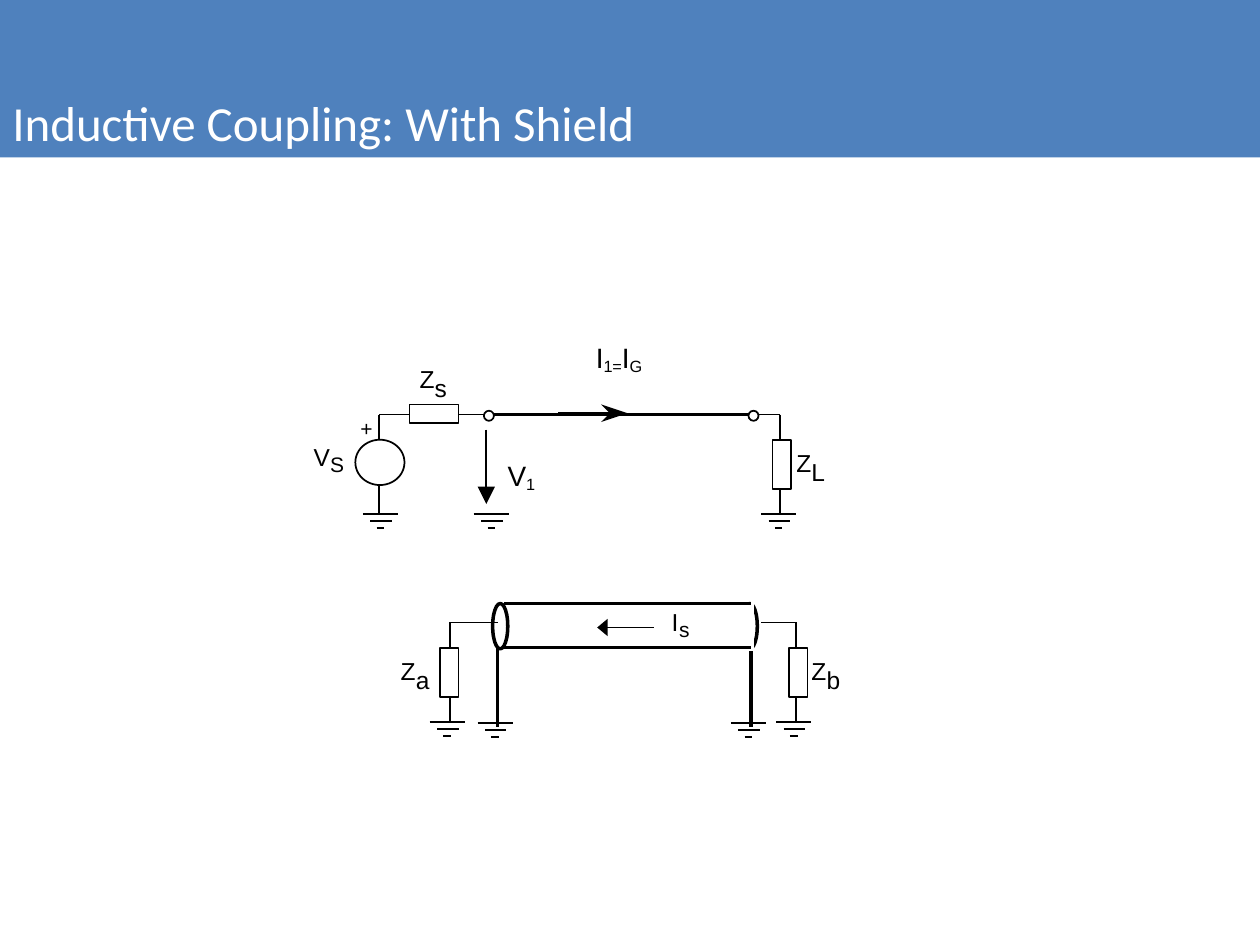
from dataclasses import dataclass

from lxml import etree
from pptx import Presentation
from pptx import util as u
from pptx.dml.color import RGBColor
from pptx.enum import shapes, text
from pptx.oxml import ns


@dataclass(frozen=True)
class Theme:
    ink: str = "000000"
    paper: str = "FFFFFF"
    banner: str = "4F81BD"
    title_font: str = "Calibri"
    label_font: str = "Arial"
    title_size: int = 28
    current_size: int = 16
    label_size: int = 14
    small_size: int = 12
    thin: int = 1
    thick: int = 2


THEME = Theme()
WIDTH, HEIGHT = 10, 7.5

# Grid of the circuit, in inches
SOURCE_X, NEAR_X, FAR_X, LOAD_X = 3.01, 3.87, 5.96, 6.19
END_A_X, SHIELD_X, END_B_X = 3.57, 3.95, 6.32
WIRE_Y, EARTH_Y = 3.29, 4.08
SHIELD_TOP, SHIELD_WIRE_Y, SHIELD_EARTH_Y = 4.79, 4.94, 5.74
SHIELD_H, SHIELD_END_W = 0.36, 0.12
BOX_LONG, BOX_SHORT, LEAD = 0.39, 0.15, 0.2
TERMINAL = 0.08
GROUND_BARS = [(0, 0.28), (0.06, 0.17), (0.11, 0.06)]
GROUND_STEP = 0.055


def color(value):
    return RGBColor.from_string(value)


def paint(shape, fill=None, line=None, weight=THEME.thin):
    shape.shadow.inherit = False
    if fill:
        shape.fill.solid()
        shape.fill.fore_color.rgb = color(fill)
    else:
        shape.fill.background()
    if line:
        shape.line.color.rgb = color(line)
        shape.line.width = u.Pt(weight)
    else:
        shape.line.fill.background()


def outline(slide, kind, x, y, w, h, fill=THEME.paper, line=THEME.ink, weight=THEME.thin):
    shape = slide.shapes.add_shape(kind, *map(u.Inches, (x, y, w, h)))
    paint(shape, fill, line, weight)
    return shape


def rect(slide, *place, **look):
    return outline(slide, shapes.MSO_SHAPE.RECTANGLE, *place, **look)


def oval(slide, *place, **look):
    return outline(slide, shapes.MSO_SHAPE.OVAL, *place, **look)


def wire(slide, x1, y1, x2, y2, weight=THEME.thin, head_length=None):
    line = slide.shapes.add_connector(
        shapes.MSO_CONNECTOR.STRAIGHT, *map(u.Inches, (x1, y1, x2, y2)))
    line.line.color.rgb = color(THEME.ink)
    line.line.width = u.Pt(weight)
    if head_length:
        etree.SubElement(line.line._get_or_add_ln(), ns.qn("a:tailEnd"),
                         type="triangle", w="lg", len=head_length)
    etree.SubElement(line._element.spPr, ns.qn("a:effectLst"))


def write(shape, *parts, size=THEME.label_size, font=THEME.label_font, ink=THEME.ink,
          inset=(0, 0), wrap=False, anchor=text.MSO_ANCHOR.TOP):
    """Write the parts as runs; every second part is a subscript."""
    frame = shape.text_frame
    frame.word_wrap = wrap
    frame.auto_size = text.MSO_AUTO_SIZE.NONE if wrap else text.MSO_AUTO_SIZE.SHAPE_TO_FIT_TEXT
    frame.vertical_anchor = anchor
    frame.margin_left = frame.margin_right = u.Inches(inset[0])
    frame.margin_top = frame.margin_bottom = u.Inches(inset[1])
    paragraph = frame.paragraphs[0]
    paragraph.alignment = text.PP_ALIGN.LEFT
    for i, part in enumerate(parts):
        run = paragraph.add_run()
        run.text = part
        run.font.size, run.font.name = u.Pt(size), font
        run.font.color.rgb = color(ink)
        if i % 2:
            run.font._element.set("baseline", "-15000")


def letter(slide, symbol, x, y, w=0.12, size=THEME.label_size):
    height = 0.23 if size == THEME.label_size else 0.2
    box = slide.shapes.add_textbox(*map(u.Inches, (x, y, w, height)))
    write(box, symbol, size=size)


def symbol(slide, main, index, x, y, step=0.12, index_size=THEME.label_size):
    letter(slide, main, x, y, step)
    letter(slide, index, x + step, y + 0.07, 0.11, index_size)


def ground(slide, x, y):
    for row, (indent, length) in enumerate(GROUND_BARS):
        bar_y = y + row * GROUND_STEP
        wire(slide, x + indent, bar_y, x + indent + length, bar_y)


def impedance_to_ground(slide, x, y, box_x, ground_x, index, label_x):
    box_y = y + LEAD
    wire(slide, x, y, x, box_y)
    rect(slide, box_x, box_y, BOX_SHORT, BOX_LONG)
    wire(slide, x, box_y + BOX_LONG, x, box_y + BOX_LONG + LEAD)
    ground(slide, ground_x, box_y + BOX_LONG + LEAD)
    symbol(slide, "Z", index, label_x, box_y + 0.07)


def terminal(slide, x):
    oval(slide, x, WIRE_Y - 0.03, TERMINAL, TERMINAL)


def draw_generator(slide):
    # Source with its series impedance
    wire(slide, SOURCE_X, WIRE_Y, SOURCE_X, EARTH_Y)
    oval(slide, 2.82, 3.49, 0.39, 0.36)
    wire(slide, SOURCE_X, WIRE_Y, 3.25, WIRE_Y)
    rect(slide, 3.25, 3.21, BOX_LONG, BOX_SHORT)
    wire(slide, 3.64, WIRE_Y, NEAR_X, WIRE_Y)
    ground(slide, 2.88, EARTH_Y)
    letter(slide, "+", 2.86, 3.3, 0.1, THEME.small_size)
    symbol(slide, "Z", "s", 3.33, 2.89)
    symbol(slide, "V", "S", 2.49, 3.51, 0.13, THEME.small_size)

    # Conductor and load
    wire(slide, NEAR_X, WIRE_Y, FAR_X, WIRE_Y, THEME.thick)
    wire(slide, 6, WIRE_Y, LOAD_X, WIRE_Y)
    terminal(slide, 3.84)
    terminal(slide, 5.94)
    impedance_to_ground(slide, LOAD_X, WIRE_Y, 6.13, 6.04, "L", 6.32)
    ground(slide, 3.76, EARTH_Y)

    # Current arrow and voltage arrow
    wire(slide, 4.43, 3.28, 4.84, 3.28)
    barb = slide.shapes.build_freeform(u.Inches(4.98), u.Inches(3.28))
    barb.add_line_segments([(u.Inches(x), u.Inches(y)) for x, y in
                            [(4.77, 3.35), (4.84, 3.28), (4.77, 3.21)]])
    paint(barb.convert_to_shape(), THEME.ink)
    wire(slide, 3.86, 3.41, 3.86, 4, head_length="lg")
    for place, parts in [((4.63, 2.65, 0.62, 0.55), ("I", "1=", "I", "G")),
                         ((3.93, 3.59, 0.43, 0.37), ("V", "1"))]:
        write(rect(slide, *place, line=None), *parts,
              size=THEME.current_size, inset=(0.1, 0.05))


def draw_shield(slide):
    # Tube: the far end shows only its outer edge
    for x in (3.91, 5.89):
        oval(slide, x, SHIELD_TOP, SHIELD_END_W, SHIELD_H, weight=THEME.thick)
    rect(slide, 5.89, SHIELD_TOP, 0.08, SHIELD_H, line=THEME.paper, weight=THEME.thick)
    for y in (SHIELD_TOP, 5.14):
        wire(slide, 4, y, FAR_X, y, THEME.thick)

    # End impedances
    wire(slide, END_A_X, SHIELD_WIRE_Y, SHIELD_X, SHIELD_WIRE_Y)
    wire(slide, 6.04, SHIELD_WIRE_Y, END_B_X, SHIELD_WIRE_Y)
    impedance_to_ground(slide, END_A_X, SHIELD_WIRE_Y, 3.49, 3.41, "a", 3.18)
    impedance_to_ground(slide, END_B_X, SHIELD_WIRE_Y, 6.26, 6.16, "b", 6.44)

    # Shield grounds
    for x, top, ground_x in [(SHIELD_X, 5.13, 3.79), (FAR_X, 5.17, 5.8)]:
        wire(slide, x, top, x, 5.77, THEME.thick)
        ground(slide, ground_x, SHIELD_EARTH_Y)

    # Shield current
    symbol(slide, "I", "s", 5.33, 4.82, 0.06, THEME.small_size)
    wire(slide, 5.19, 4.98, 4.74, 4.98, head_length="med")


def draw_title(slide):
    banner = rect(slide, 0, 0, WIDTH, HEIGHT / 6, fill=THEME.banner, line=None)
    write(banner, "Inductive Coupling: With Shield", size=THEME.title_size,
          font=THEME.title_font, ink=THEME.paper, inset=(0.1, 0.05), wrap=True,
          anchor=text.MSO_ANCHOR.BOTTOM)


def main():
    deck = Presentation()
    deck.slide_width, deck.slide_height = u.Inches(WIDTH), u.Inches(HEIGHT)
    slide = deck.slides.add_slide(deck.slide_layouts[6])
    draw_generator(slide)
    draw_shield(slide)
    draw_title(slide)
    deck.save("out.pptx")


if __name__ == "__main__":
    main()
